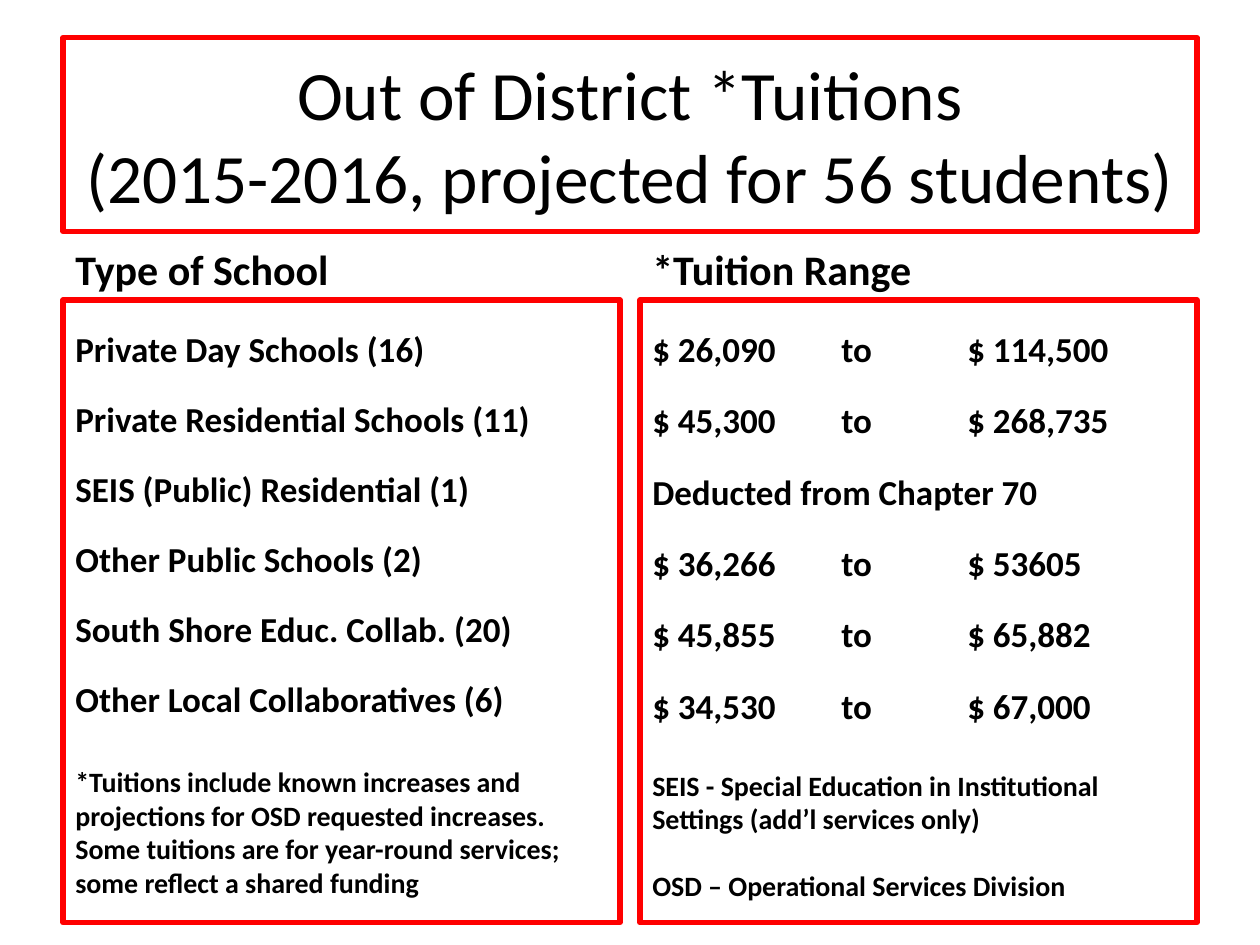
from lxml.etree import SubElement
from pptx import Presentation
from pptx.dml.color import RGBColor
from pptx.enum.shapes import MSO_SHAPE as Shape
from pptx.enum.text import MSO_ANCHOR as Anchor, PP_ALIGN as Align
from pptx.oxml.ns import qn
from pptx.util import Cm, Pt

RED = RGBColor(0xFF, 0x00, 0x00)
BLACK = RGBColor(0x00, 0x00, 0x00)

# Page grid, in centimetres
LEFT, RIGHT, FULL_WIDTH, COLUMN_WIDTH = 1.27, 12.9, 22.86, 11.23
TITLE_TOP, TITLE_HEIGHT = 0.76, 3.91
HEADING_TOP, HEADING_HEIGHT = 4.27, 1.78
PANEL_TOP, PANEL_HEIGHT = 6.05, 12.55
RANGE_TABS = (3.81, 6.35)

SCHOOLS = [
    "Private Day Schools (16)",
    "Private Residential Schools (11)",
    "SEIS (Public) Residential (1)",
    "Other Public Schools (2)",
    "South Shore Educ. Collab. (20)",
    "Other Local Collaboratives (6)",
]
RANGES = [
    "$ 26,090\tto\t$ 114,500",
    "$ 45,300\tto\t$ 268,735",
    "Deducted from Chapter 70",
    "$ 36,266\tto\t$ 53605",
    "$ 45,855\tto\t$ 65,882",
    "$ 34,530\tto\t$ 67,000",
]
SCHOOL_NOTES = [
    ("*Tuitions include known increases and projections for OSD requested "
     "increases. Some tuitions are for year-round services; some reflect "
     "a shared funding", 26),
]
RANGE_NOTES = [
    ("SEIS - Special Education in Institutional Settings "
     "(add’l services only)", 24),
    ("OSD – Operational Services Division", 19),
]


def write(frame, text, size=20, bold=True, align=Align.LEFT, spacing=1.0,
          before=0, tabs=()):
    """Add one formatted paragraph, filling the empty first one if there is one."""
    first = frame.paragraphs[0]
    is_first = not first.runs
    para = first if is_first else frame.add_paragraph()
    para.alignment = align
    para.line_spacing = spacing
    para.space_before = Pt(0 if is_first else before)
    if tabs:
        stops = SubElement(para._p.get_or_add_pPr(), qn("a:tabLst"))
        for stop in tabs:
            SubElement(stops, qn("a:tab"), pos=str(Cm(stop)), algn="l")
    para.text = text
    for span in para.runs:
        font = span.font
        font.name, font.size, font.bold = "Calibri", Pt(size), bold
        font.color.rgb = BLACK


class TuitionPage:
    def __init__(self, page, border=RED, border_width=3):
        self.page = page
        self.border = border
        self.border_width = Pt(border_width)

    def framed_box(self, left, top, width, height, anchor):
        box = self.page.shapes.add_shape(
            Shape.RECTANGLE, Cm(left), Cm(top), Cm(width), Cm(height))
        box.shadow.inherit = False
        box.fill.background()
        box.line.color.rgb = self.border
        box.line.width = self.border_width
        box.text_frame.word_wrap = True
        box.text_frame.vertical_anchor = anchor
        return box.text_frame

    def title(self, text):
        frame = self.framed_box(
            LEFT, TITLE_TOP, FULL_WIDTH, TITLE_HEIGHT, Anchor.MIDDLE)
        write(frame, text, size=39.6, bold=False, align=Align.CENTER)

    def heading(self, left, text):
        box = self.page.shapes.add_textbox(
            Cm(left), Cm(HEADING_TOP), Cm(COLUMN_WIDTH), Cm(HEADING_HEIGHT))
        box.text_frame.word_wrap = True
        box.text_frame.vertical_anchor = Anchor.BOTTOM
        write(box.text_frame, text, size=24)

    def panel(self, left, rows, notes, before, tabs=()):
        frame = self.framed_box(
            left, PANEL_TOP, COLUMN_WIDTH, PANEL_HEIGHT, Anchor.TOP)
        for row in rows:
            write(frame, row, spacing=1.5, before=before, tabs=tabs)
        for note, gap in notes:
            write(frame, note, size=16, before=gap)


def main():
    deck = Presentation()
    deck.slide_width, deck.slide_height = Cm(25.4), Cm(19.05)
    tuition = TuitionPage(deck.slides.add_slide(deck.slide_layouts[6]))

    # Title
    tuition.title("Out of District *Tuitions\v(2015-2016, projected for 56 students)")

    # School types
    tuition.heading(LEFT, "Type of School")
    tuition.panel(LEFT, SCHOOLS, SCHOOL_NOTES, before=4)

    # Tuition ranges
    tuition.heading(RIGHT, "*Tuition Range")
    tuition.panel(RIGHT, RANGES, RANGE_NOTES, before=4.8, tabs=RANGE_TABS)

    deck.save("out.pptx")


if __name__ == "__main__":
    main()
